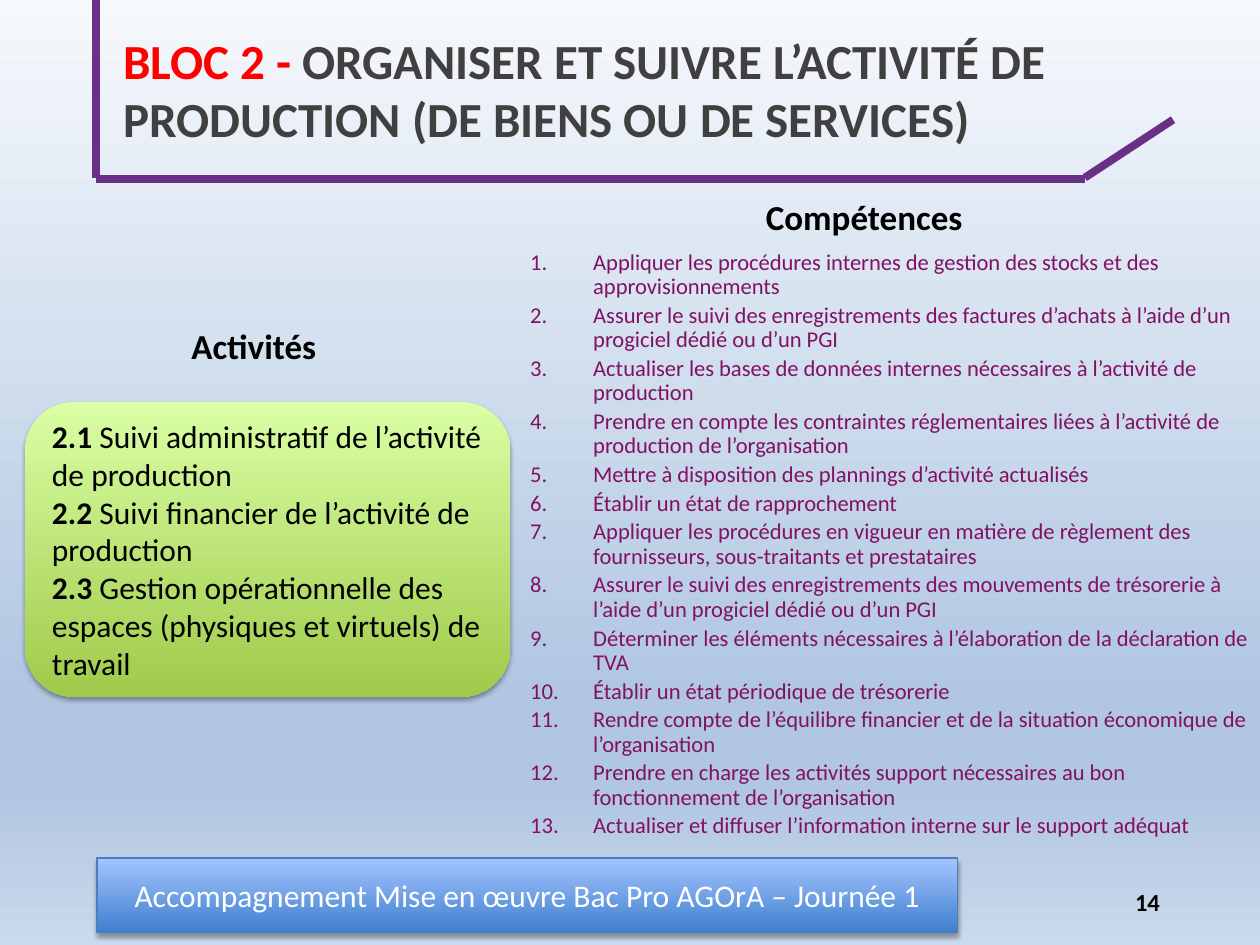
import pptx
import pptx.util
import pptx.dml.color
import pptx.enum.shapes
import pptx.enum.text
import pptx.oxml
import pptx.oxml.ns
from pptx.util import Inches

TITLE = [[("BLOC 2 - ", "alert"),
          ("ORGANISER ET SUIVRE L’ACTIVITÉ DE PRODUCTION (DE BIENS OU DE SERVICES)", "title")]]
TASKS = [
    ("2.1 ", "Suivi administratif de l’activité de production"),
    ("2.2 ", "Suivi financier de l’activité de production"),
    ("2.3 ", "Gestion opérationnelle des espaces (physiques et virtuels) de travail"),
]
SKILLS = [
    "Appliquer les procédures internes de gestion des stocks et des approvisionnements",
    "Assurer le suivi des enregistrements des factures d’achats à l’aide d’un progiciel dédié ou d’un PGI",
    "Actualiser les bases de données internes nécessaires à l’activité de production",
    "Prendre en compte les contraintes réglementaires liées à l’activité de production de l’organisation",
    "Mettre à disposition des plannings d’activité actualisés",
    "Établir un état de rapprochement",
    "Appliquer les procédures en vigueur en matière de règlement des fournisseurs, sous-traitants et prestataires",
    "Assurer le suivi des enregistrements des mouvements de trésorerie à l’aide d’un progiciel dédié ou d’un PGI",
    "Déterminer les éléments nécessaires à l’élaboration de la déclaration de TVA",
    "Établir un état périodique de trésorerie",
    "Rendre compte de l’équilibre financier et de la situation économique de l’organisation",
    "Prendre en charge les activités support nécessaires au bon fonctionnement de l’organisation",
    "Actualiser et diffuser l’information interne sur le support adéquat",
]
FOOTER = "Accompagnement Mise en œuvre Bac Pro AGOrA – Journée 1"
PAGE = "14"
FRAME = [(0.76, 0, 0.76, 1.41), (0.76, 1.42, 8.61, 1.42), (8.61, 1.41, 9.31, 0.95)]

# Gradients run from top to bottom; styles are (size, colour, bold).
THEME = {
    "font": "Calibri",
    "frame": "683086",
    "edge": "4B7EBC",
    "page": [(0, "F6F9FC"), (74, "B0C6E1"), (83, "B0C6E1"), (100, "CAD9EB")],
    "green": [(0, "DAFFA5"), (100, "A0CA4A")],
    "blue": [(0, "A4C4FF"), (100, "3F80CE")],
    "styles": {
        "alert": (28, "FF0000", True),
        "title": (28, "404040", True),
        "head": (20, "000000", True),
        "skill": (12.9, "821164", False),
        "code": (18, "000000", True),
        "task": (18, "000000", False),
        "foot": (18, "FFFFFF", False),
        "num": (14, "000000", True),
    },
}
KIND = pptx.enum.shapes.MSO_SHAPE
ALIGN = pptx.enum.text.PP_ALIGN
MIDDLE = pptx.enum.text.MSO_ANCHOR.MIDDLE


def rgb(code):
    return pptx.dml.color.RGBColor.from_string(code)


def node(text):
    space = pptx.oxml.ns.nsdecls("a")
    return pptx.oxml.parse_xml(text.replace(" ", f" {space} ", 1))


def shade(fill, root, stops):
    """Fill with a vertical gradient; root is the element that holds the fill."""
    fill.gradient()
    fill.gradient_angle = 270
    group = root.find(".//" + pptx.oxml.ns.qn("a:gsLst"))
    for old in list(group):
        group.remove(old)
    for place, code in stops:
        group.append(node(f'<a:gs pos="{place * 1000}"><a:srgbClr val="{code}"/></a:gs>'))


def write(shape, paras, align=ALIGN.LEFT, wrap=True, anchor=None):
    """Write paragraphs, each a list of (text, style) runs."""
    frame = shape.text_frame
    frame.word_wrap = wrap
    if anchor is not None:
        frame.vertical_anchor = anchor
    for i, runs in enumerate(paras):
        para = frame.paragraphs[0] if i == 0 else frame.add_paragraph()
        para.alignment = align
        for text, style in runs:
            run = para.add_run()
            run.text = text
            size, code, bold = THEME["styles"][style]
            form = {"name": THEME["font"], "size": pptx.util.Pt(size), "bold": bold}
            for key, value in form.items():
                setattr(run.font, key, value)
            run.font.color.rgb = rgb(code)
    return frame


def label(slide, box, paras, **form):
    return write(slide.shapes.add_textbox(*map(Inches, box)), paras, **form)


def panel(slide, kind, box, stops, edge=None):
    """Add a gradient shape with a soft shadow below it."""
    shape = slide.shapes.add_shape(kind, *map(Inches, box))
    shade(shape.fill, shape.element.spPr, stops)
    if edge:
        shape.line.color.rgb = rgb(edge)
        shape.line.width = pptx.util.Pt(0.75)
    else:
        shape.line.fill.background()
    shape.shadow.inherit = False
    glow = shape.element.spPr.find(pptx.oxml.ns.qn("a:effectLst"))
    blur, drop = pptx.util.Pt(3.1), pptx.util.Pt(1.8)
    glow.append(node(
        f'<a:outerShdw blurRad="{blur}" dist="{drop}" dir="5400000" rotWithShape="0">'
        '<a:srgbClr val="000000"><a:alpha val="35000"/></a:srgbClr></a:outerShdw>'))
    return shape


def rule(slide, ends):
    line = slide.shapes.add_connector(
        pptx.enum.shapes.MSO_CONNECTOR.STRAIGHT, *map(Inches, ends))
    line.line.color.rgb = rgb(THEME["frame"])
    line.line.width = pptx.util.Pt(4.5)
    line.element.spPr.append(node("<a:effectLst />"))


def number(frame):
    """Turn the paragraphs into a numbered list with a hanging indent."""
    hang = Inches(0.5)
    for i, para in enumerate(frame.paragraphs):
        para.line_spacing = 0.9
        para.space_before = pptx.util.Pt(2.5 if i else 0)
        props = para._p.get_or_add_pPr()
        props.set("marL", str(hang))
        props.set("indent", str(-hang))
        props.append(node('<a:buFont typeface="+mj-lt"/>'))
        props.append(node('<a:buAutoNum type="arabicPeriod"/>'))


def main():
    deck = pptx.Presentation()
    deck.slide_width, deck.slide_height = Inches(10), Inches(7.5)
    slide = deck.slides.add_slide(deck.slide_layouts[6])
    shade(slide.background.fill, slide.element, THEME["page"])

    for ends in FRAME:
        rule(slide, ends)
    label(slide, (0.88, 0, 8.62, 1.41), TITLE, anchor=MIDDLE)
    label(slide, (1.42, 2.53, 1.2, 0.44), [[("Activités", "head")]], wrap=False)
    label(slide, (5.98, 1.5, 1.78, 0.44), [[("Compétences", "head")]], wrap=False)
    number(label(slide, (4.11, 1.94, 5.89, 4.94), [[(s, "skill")] for s in SKILLS]))

    card = panel(slide, KIND.ROUNDED_RECTANGLE, (0.2, 3.19, 3.85, 2.34), THEME["green"])
    write(card, [[(code, "code"), (task, "task")] for code, task in TASKS], anchor=MIDDLE)
    bar = panel(slide, KIND.RECTANGLE, (0.77, 6.81, 6.83, 0.59), THEME["blue"], THEME["edge"])
    write(bar, [[(FOOTER, "foot")]], align=ALIGN.CENTER, anchor=MIDDLE)
    label(slide, (8.91, 6.99, 0.49, 0.4), [[(PAGE, "num")]])
    deck.save("out.pptx")


if __name__ == "__main__":
    main()
